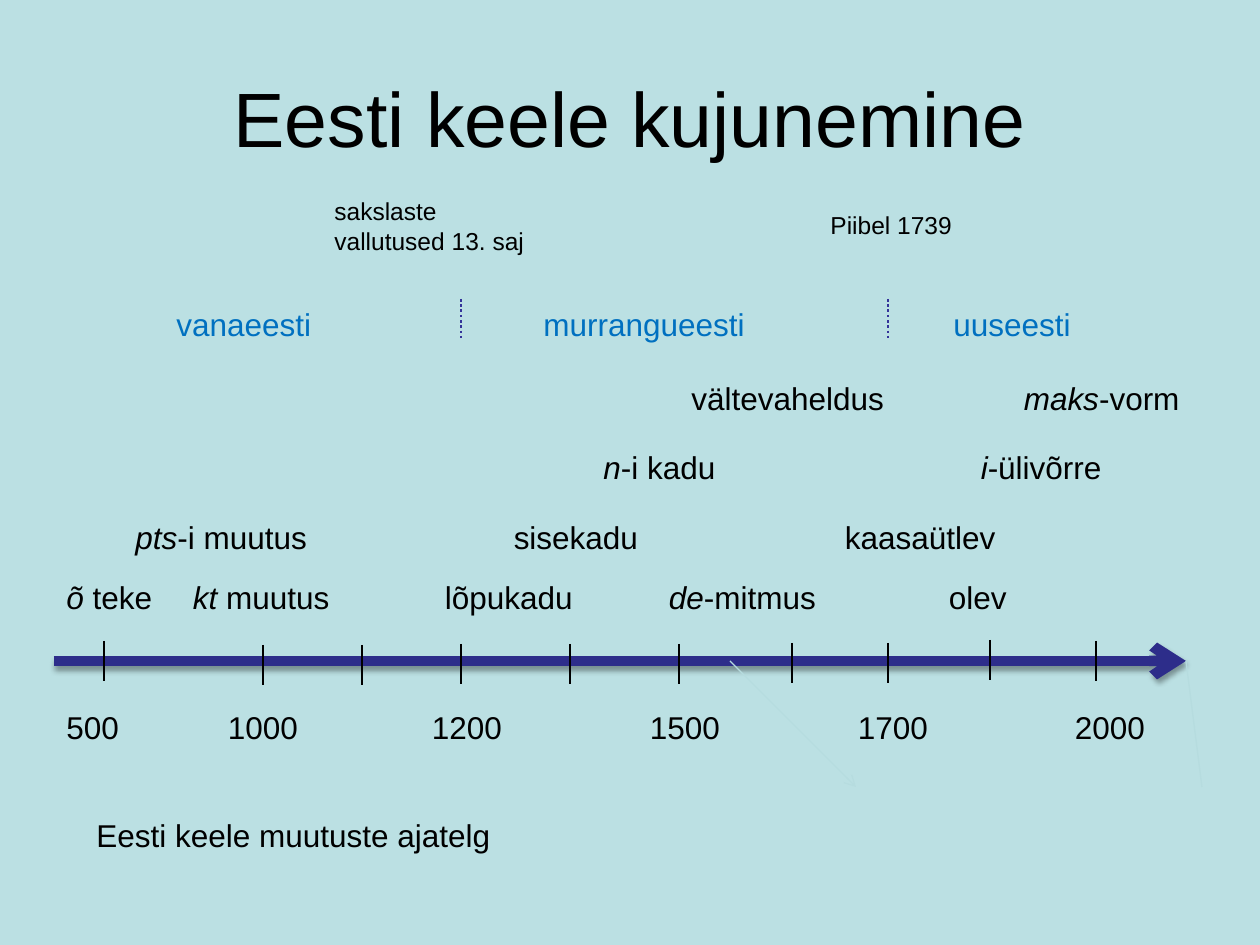
from lxml import etree
from pptx import Presentation
from pptx.dml.color import RGBColor
from pptx.enum.dml import MSO_LINE
from pptx.enum.shapes import MSO_CONNECTOR
from pptx.enum.text import MSO_ANCHOR, PP_ALIGN
from pptx.oxml.ns import qn
from pptx.util import Pt

SCALE = 914400 / 126  # EMU in one px
INSET = 12.6  # default left inset of a text box, in px

BACKGROUND = RGBColor(0xBB, 0xE0, 0xE3)
BLACK = RGBColor(0x00, 0x00, 0x00)
PERIOD_BLUE = RGBColor(0x00, 0x70, 0xC0)
AXIS_BLUE = RGBColor(0x2D, 0x2D, 0x8A)
BORDER_BLUE = RGBColor(0x33, 0x33, 0x99)
PALE = RGBColor(0xB6, 0xDC, 0xDF)


def emu(px):
    return round(px * SCALE)


def write_text(frame, text, size=18, color=BLACK, align=PP_ALIGN.LEFT):
    """Write one paragraph; the parts between asterisks are italic."""
    paragraph = frame.paragraphs[0]
    paragraph.alignment = align
    for index, part in enumerate(text.split("*")):
        if part:
            run = paragraph.add_run()
            run.text = part
            run.font.name = "Arial"
            run.font.size = Pt(size)
            run.font.color.rgb = color
            run.font.italic = index % 2 == 1
    return paragraph


def add_text(slide, box, text, tabs=(), **text_format):
    """Add a text box; tabs are px from the left edge of the box."""
    shape = slide.shapes.add_textbox(*map(emu, box))
    shape.text_frame.word_wrap = True
    paragraph = write_text(shape.text_frame, text, **text_format)
    if tabs:
        properties = paragraph._p.get_or_add_pPr()
        tab_list = etree.SubElement(properties, qn("a:tabLst"))
        for tab in tabs:
            etree.SubElement(tab_list, qn("a:tab"),
                             pos=str(emu(tab - INSET)), algn="l")


def add_line(slide, start, end, color=BLACK, width=0.75, dash=None,
             arrow=False, shadow=False):
    line = slide.shapes.add_connector(
        MSO_CONNECTOR.STRAIGHT, *map(emu, (*start, *end)))
    line.line.color.rgb = color
    line.line.width = Pt(width)
    if dash:
        line.line.dash_style = dash
    if arrow:
        etree.SubElement(line.line._get_or_add_ln(), qn("a:tailEnd"), type="arrow")
    effects = etree.SubElement(line._element.spPr, qn("a:effectLst"))
    if shadow:
        outer = etree.SubElement(effects, qn("a:outerShdw"), blurRad="40000",
                                 dist="23000", dir="5400000", rotWithShape="0")
        shade = etree.SubElement(outer, qn("a:srgbClr"), val="000000")
        etree.SubElement(shade, qn("a:alpha"), val="35000")


def place_title(slide, box):
    title = slide.shapes.title
    title.left, title.top, title.width, title.height = map(emu, box)
    title.text_frame.vertical_anchor = MSO_ANCHOR.MIDDLE
    write_text(title.text_frame, "Eesti keele kujunemine", size=44,
               align=PP_ALIGN.CENTER)


def place_timeline(slide, box):
    left, top, width, height = box
    middle = top + 20
    # Axis and the two faint lines below it
    add_line(slide, (left, middle), (left + width, middle), AXIS_BLUE, 6,
             arrow=True, shadow=True)
    add_line(slide, (left + 676, middle), (left + 802, middle + 126), PALE,
             arrow=True)
    add_line(slide, (left + width, middle), (left + width + 16, middle + 126), PALE)
    # Ticks: offset along the axis and from the top of the box
    ticks = [(50, 0), (209, 4), (308, 4), (407, 3), (516, 3),
             (625, 3), (738, 2), (834, 2), (936, -1), (1042, 0)]
    for x, y in ticks:
        add_line(slide, (left + x, top + y), (left + x, top + y + 40))
    # Years
    add_text(slide, (left, top + 61, width + 16, height - 61),
             "500\t1000\t1200\t1500\t1700\t2000",
             tabs=(174, 378, 596, 804, 1021))


def place_changes(slide, box):
    left, top, width, height = box
    # Left and top offsets, width, text, tab stops
    rows = [
        (625, 0, 523, "vältevaheldus\t*maks*-vorm", (345,)),
        (537, 69, 556, "*n*-i kadu\t*i*-ülivõrre", (390,)),
        (69, 139, 932, "*pts*-i muutus\tsisekadu\tkaasaütlev", (391, 722)),
        (0, 199, 1091, "*õ* teke\t*kt* muutus\tlõpukadu\t*de*-mitmus\tolev",
         (139, 391, 615, 895)),
    ]
    for x, y, row_width, text, tabs in rows:
        add_text(slide, (left + x, top + y, row_width, 50), text, tabs)


def place_periods(slide, box):
    left, top, width, height = box
    # Dashed borders between periods
    for x in (297, 724):
        add_line(slide, (left + x, top), (left + x, top + 40), BORDER_BLUE, 1.5,
                 dash=MSO_LINE.ROUND_DOT)
    # Period names
    periods = [(0, 198, "vanaeesti"), (367, 261, "murrangueesti"),
               (777, 244, "uuseesti")]
    for x, name_width, name in periods:
        add_text(slide, (left + x, top, name_width, height), name,
                 color=PERIOD_BLUE)


def place_events(slide, box):
    left, top, width, height = box
    add_text(slide, (left, top, 226, height), "sakslaste vallutused 13. saj",
             size=14)
    add_text(slide, (left + 496, top + 14, 171, 43), "Piibel 1739", size=14)


def main():
    presentation = Presentation()
    presentation.slide_width, presentation.slide_height = emu(1260), emu(945)
    slide = presentation.slides.add_slide(presentation.slide_layouts[5])
    slide.background.fill.solid()
    slide.background.fill.fore_color.rgb = BACKGROUND

    place_title(slide, (63, 38, 1134, 157))
    place_timeline(slide, (54, 641, 1132, 150))
    add_text(slide, (84, 810, 625, 50), "Eesti keele muutuste ajatelg")
    place_changes(slide, (54, 373, 1148, 249))
    place_periods(slide, (164, 299, 1021, 50))
    place_events(slide, (322, 190, 667, 72))

    presentation.save("out.pptx")


if __name__ == "__main__":
    main()
